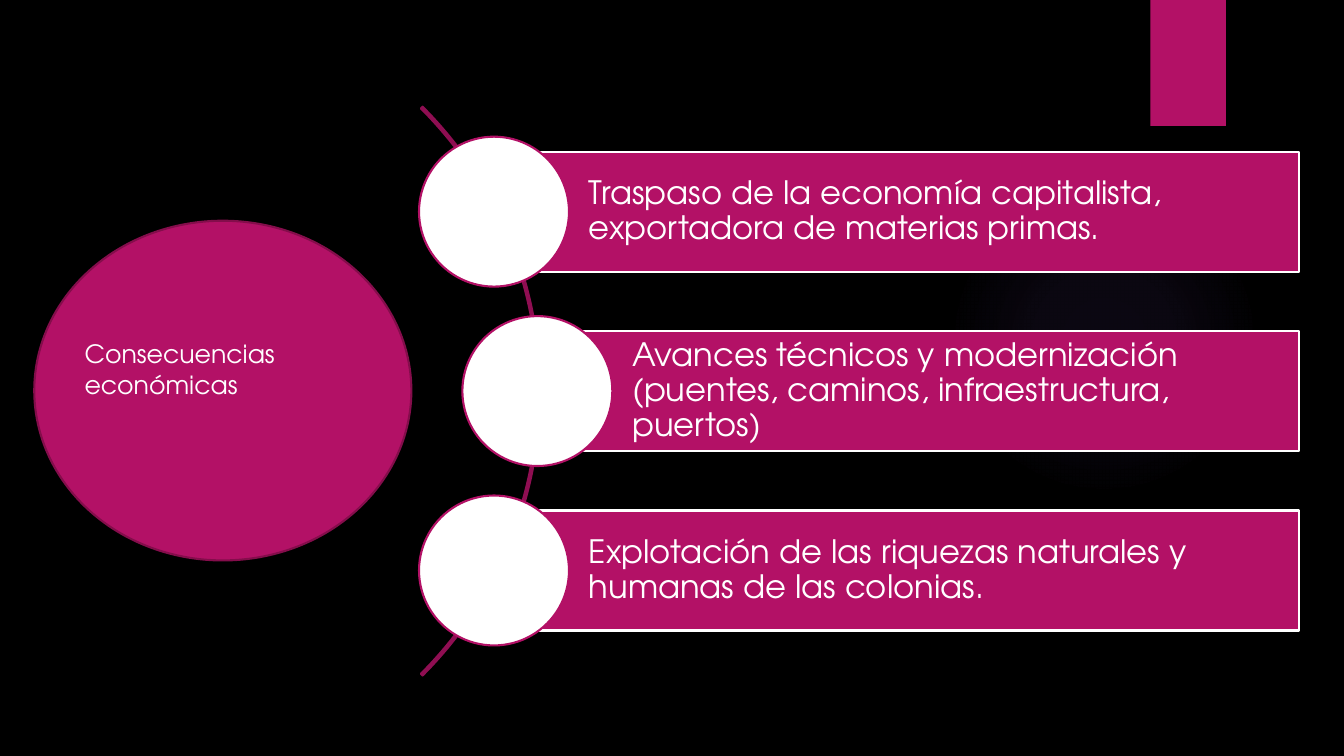
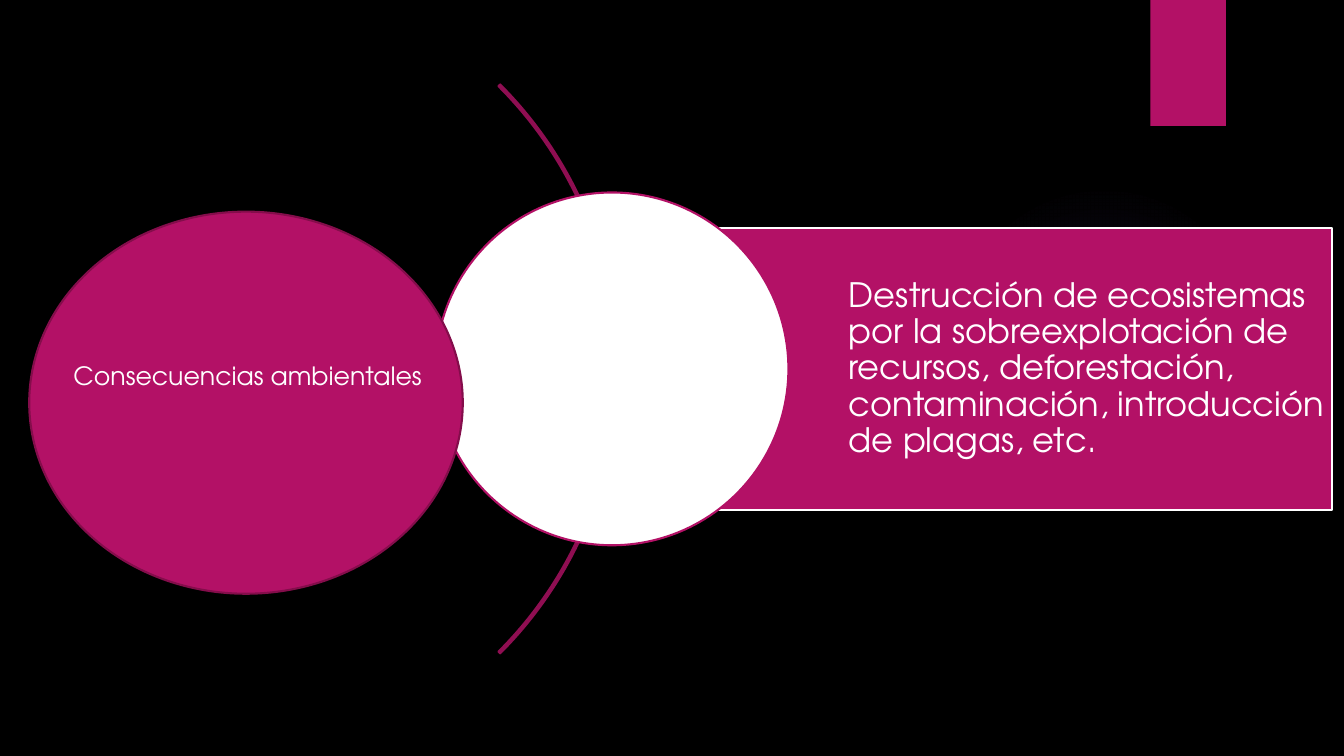
import pptx
import pptx.dml.color
import pptx.enum.shapes
import pptx.enum.text
import pptx.oxml
import pptx.oxml.ns
import pptx.util
from pptx.enum.shapes import MSO_SHAPE
from pptx.util import Inches


class Theme:
    background = "000000"
    accent = "B31166"
    topic_edge = "840D4B"
    arc = "8F0E52"
    glow = "9B6BF2"
    light = "FFFFFF"
    font = "TeX Gyre Adventor"
    topic_size = 18
    line_width = 1.5


ARC_DIAMETER = 7.98
ROW_PITCH = 1.78
NODE_TO_BAR = 1.25  # circle diameter relative to bar height
GLOW_STOPS = [(0, 7), (36, 6), (69, 0)]  # position and opacity, in percent

# Each row: horizontal centre of its circle, then the text of its bar.
SLIDES = [
    {
        "topic": "Consecuencias económicas",
        "topic_oval": (0.34, 2.19, 3.74, 3.37),
        "topic_text": (0.74, 3.31, 3.01, 0.71),
        "arc_center": (1.37, 3.88),
        "bar_height": 1.19,
        "bar_right": 12.88,
        "text_inset": 0.94,
        "padding": 0.06,
        "text_size": 23,
        "rows": [
            (4.9, "Traspaso de la economía capitalista, exportadora de materias primas."),
            (5.33, "Avances técnicos y modernización (puentes, caminos, infraestructura, puertos)"),
            (4.9, "Explotación de las riquezas naturales y humanas de las colonias."),
        ],
    },
    {
        "topic": "Consecuencias ambientales",
        "topic_oval": (0.29, 2.1, 4.3, 3.79),
        "topic_text": (0.63, 3.53, 3.69, 0.4),
        "arc_center": (2.14, 3.66),
        "bar_height": 2.8,
        "bar_right": 13.21,
        "text_inset": 2.35,
        "padding": 0.07,
        "text_size": 24,
        "rows": [
            (6.07, "Destrucción de ecosistemas por la sobreexplotación de recursos, "
                   "deforestación, contaminación, introducción de plagas, etc."),
        ],
    },
]


def color(value):
    return pptx.dml.color.RGBColor.from_string(value)


def xml(text):
    """Parse DrawingML whose root element is written with the a: prefix."""
    head, rest = text.split(">", 1)
    return pptx.oxml.parse_xml(f"{head} {pptx.oxml.ns.nsdecls('a')}>{rest}")


def add_shape(slide, preset, box, fill=None, line=None):
    shape = slide.shapes.add_shape(preset, *map(Inches, box))
    shape.shadow.inherit = False
    if fill:
        shape.fill.solid()
        shape.fill.fore_color.rgb = color(fill)
    else:
        shape.fill.background()
    if line:
        shape.line.color.rgb = color(line)
        shape.line.width = pptx.util.Pt(Theme.line_width)
    else:
        shape.line.fill.background()
    return shape


def add_circle(slide, center_x, center_y, diameter, preset=MSO_SHAPE.OVAL, **colors):
    box = (center_x - diameter / 2, center_y - diameter / 2, diameter, diameter)
    return add_shape(slide, preset, box, **colors)


def write(text_frame, text, size):
    text_frame.word_wrap = True
    paragraph = text_frame.paragraphs[0]
    paragraph.text = text
    paragraph.alignment = pptx.enum.text.PP_ALIGN.LEFT
    paragraph.font.name = Theme.font
    paragraph.font.size = pptx.util.Pt(size)
    paragraph.font.color.rgb = color(Theme.light)
    return paragraph


def style_master(master, slide):
    """Give the master its background, glow and band, drawn first on a slide."""
    master.background.fill.solid()
    master.background.fill.fore_color.rgb = color(Theme.background)

    glow = add_circle(slide, 10.95, 3.37, 3.08)
    stops = "".join(
        f'<a:gs pos="{position * 1000}"><a:srgbClr val="{Theme.glow}">'
        f'<a:alpha val="{opacity * 1000}"/></a:srgbClr></a:gs>'
        for position, opacity in GLOW_STOPS)
    properties = glow.element.spPr
    properties.replace(
        properties.find(pptx.oxml.ns.qn("a:noFill")),
        xml(f'<a:gradFill><a:gsLst>{stops}</a:gsLst><a:path path="circle">'
            '<a:fillToRect l="50000" t="50000" r="50000" b="50000"/></a:path></a:gradFill>'))

    band = add_shape(slide, MSO_SHAPE.RECTANGLE, (11.41, 0, 0.75, 1.25), Theme.accent)
    band.element.spPr.find(pptx.oxml.ns.qn("a:effectLst")).append(
        xml('<a:outerShdw blurRad="38100" dist="25400" dir="5400000">'
            '<a:srgbClr val="000000"><a:alpha val="45000"/></a:srgbClr></a:outerShdw>'))

    for number, shape in enumerate((glow, band), start=100):
        shape.element.nvSpPr.cNvPr.set("id", str(number))
        master.shapes.element.append(shape.element)


def add_row(slide, content, center_x, center_y, text):
    height, padding = content["bar_height"], content["padding"]
    bar = add_shape(
        slide, MSO_SHAPE.RECTANGLE,
        (center_x, center_y - height / 2, content["bar_right"] - center_x, height),
        Theme.accent, Theme.light)
    frame = bar.text_frame
    frame.margin_left = Inches(content["text_inset"])
    frame.margin_top = frame.margin_right = frame.margin_bottom = Inches(padding)
    frame.vertical_anchor = pptx.enum.text.MSO_ANCHOR.MIDDLE
    write(frame, text, content["text_size"]).line_spacing = 0.9
    add_circle(slide, center_x, center_y, height * NODE_TO_BAR,
               fill=Theme.light, line=Theme.accent)


def fill_slide(slide, content):
    arc_x, arc_y = content["arc_center"]
    arc = add_circle(slide, arc_x, arc_y, ARC_DIAMETER, MSO_SHAPE.BLOCK_ARC, line=Theme.arc)
    for index, value in enumerate((189, 27, 0.003)):  # start, end, thickness
        arc.adjustments[index] = value

    rows = content["rows"]
    for index, (center_x, text) in enumerate(rows):
        center_y = arc_y + (index - (len(rows) - 1) / 2) * ROW_PITCH
        add_row(slide, content, center_x, center_y, text)

    add_shape(slide, MSO_SHAPE.OVAL, content["topic_oval"], Theme.accent, Theme.topic_edge)
    label = slide.shapes.add_textbox(*map(Inches, content["topic_text"]))
    write(label.text_frame, content["topic"], Theme.topic_size)
    label.text_frame.auto_size = pptx.enum.text.MSO_AUTO_SIZE.SHAPE_TO_FIT_TEXT


def main():
    presentation = pptx.Presentation()
    presentation.slide_width = Inches(13.33)
    presentation.slide_height = Inches(7.5)
    blank = presentation.slide_layouts[6]
    slides = [presentation.slides.add_slide(blank) for _ in SLIDES]
    style_master(presentation.slide_master, slides[0])
    for slide, content in zip(slides, SLIDES):
        fill_slide(slide, content)
    presentation.save("out.pptx")


if __name__ == "__main__":
    main()
